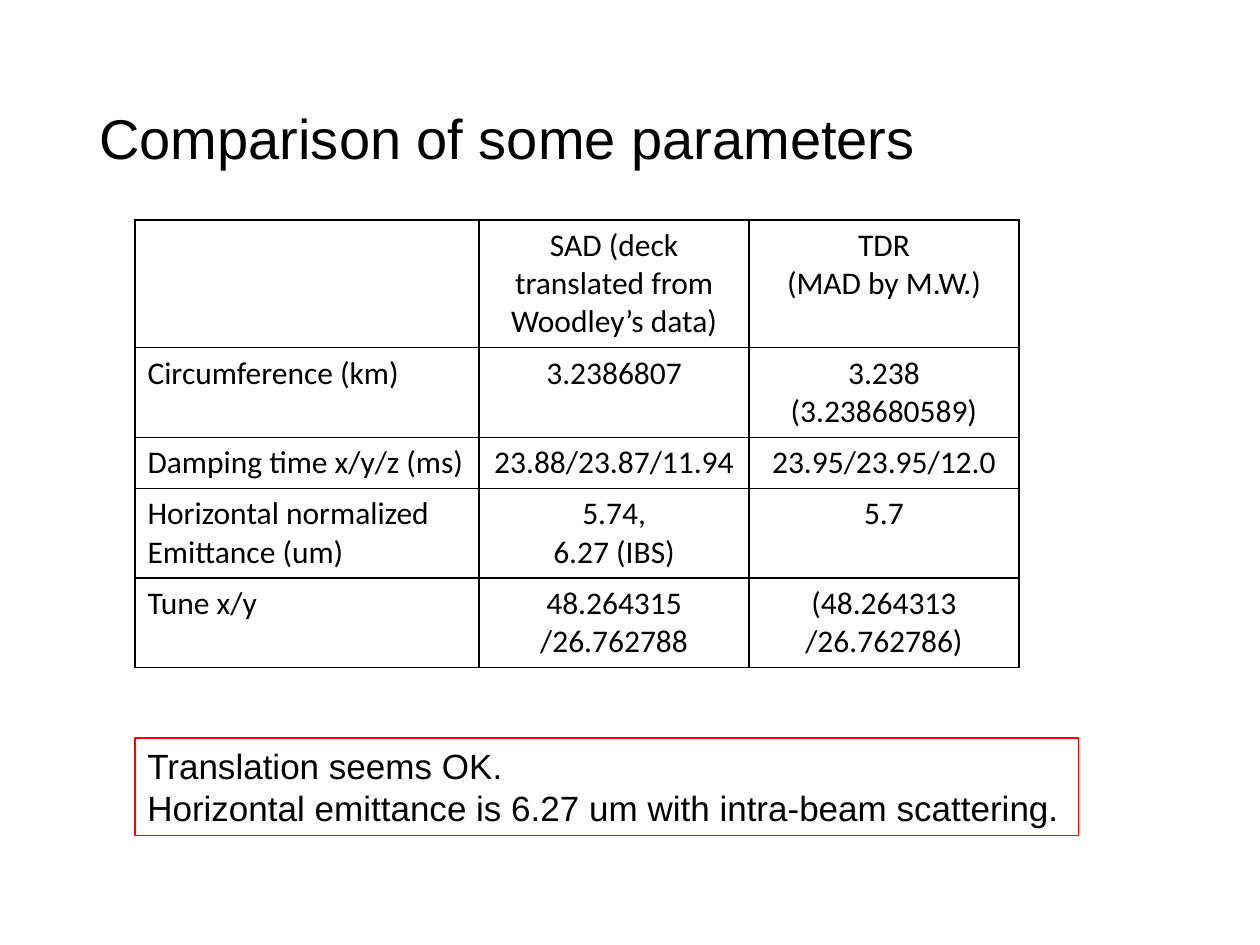
from dataclasses import dataclass

from lxml.etree import SubElement
from pptx import Presentation
from pptx.dml.color import RGBColor
from pptx.enum.text import MSO_ANCHOR, MSO_AUTO_SIZE, PP_ALIGN
from pptx.oxml.ns import qn
from pptx.util import Cm, Pt

BLACK = RGBColor(0x00, 0x00, 0x00)
RED = RGBColor(0xFF, 0x00, 0x00)

TITLE_FONT = "Arial"
TABLE_FONT = "Calibri"
LEFT_EDGE = Cm(2.72)
COLUMN_WIDTHS = (Cm(6.94), Cm(5.44), Cm(5.44))
ROW_HEIGHT = Cm(1.03)


@dataclass(frozen=True)
class Comparison:
    parameter: str
    sad: str
    tdr: str


COMPARISONS = (
    Comparison("", "SAD (deck translated from Woodley’s data)", "TDR\n(MAD by M.W.)"),
    Comparison("Circumference (km)", "3.2386807", "3.238\n(3.238680589)"),
    Comparison("Damping time x/y/z (ms)", "23.88/23.87/11.94", "23.95/23.95/12.0"),
    Comparison("Horizontal normalized Emittance (um)", "5.74,\n6.27 (IBS)", "5.7"),
    Comparison("Tune x/y", "48.264315\n/26.762788", "(48.264313\n/26.762786)"),
)


def format_text(frame, font: str, size: int, align: PP_ALIGN = PP_ALIGN.LEFT) -> None:
    for para in frame.paragraphs:
        para.alignment = align
        for span in para.runs:
            span.font.name = font
            span.font.size = Pt(size)
            span.font.bold = False
            span.font.color.rgb = BLACK


def add_cell_borders(cell, width: int = Pt(1)) -> None:
    properties = cell._tc.get_or_add_tcPr()
    for position, side in enumerate(("a:lnL", "a:lnR", "a:lnT", "a:lnB")):
        line = SubElement(properties, qn(side), w=str(width))
        fill = SubElement(line, qn("a:solidFill"))
        SubElement(fill, qn("a:srgbClr"), val=str(BLACK))
        properties.insert(position, line)  # borders precede the cell fill


def add_title(page, text: str) -> None:
    title = page.shapes.title
    title.left, title.top, title.width, title.height = Cm(1.75), Cm(1.01), Cm(21.9), Cm(3.68)
    frame = title.text_frame
    frame.text = text
    frame.vertical_anchor = MSO_ANCHOR.MIDDLE
    frame.paragraphs[0].line_spacing = 0.9
    format_text(frame, TITLE_FONT, 32)


def add_comparison_table(page, comparisons: tuple[Comparison, ...]) -> None:
    table = page.shapes.add_table(
        len(comparisons), len(COLUMN_WIDTHS), LEFT_EDGE, Cm(4.43),
        sum(COLUMN_WIDTHS), ROW_HEIGHT * len(comparisons),
    ).table
    table.first_row = table.horz_banding = False
    for column, width in zip(table.columns, COLUMN_WIDTHS):
        column.width = width
    for row, comparison in zip(table.rows, comparisons):
        row.height = ROW_HEIGHT
        texts = (comparison.parameter, comparison.sad, comparison.tdr)
        for index, (cell, text) in enumerate(zip(row.cells, texts)):
            cell.text_frame.text = text
            align = PP_ALIGN.CENTER if index else PP_ALIGN.LEFT
            format_text(cell.text_frame, TABLE_FONT, 18, align)
            cell.fill.background()
            add_cell_borders(cell)


def add_conclusion(page, text: str) -> None:
    box = page.shapes.add_textbox(LEFT_EDGE, Cm(14.88), Cm(19.02), Cm(1.96))
    box.line.color.rgb = RED
    box.line.width = Pt(0.75)
    frame = box.text_frame
    frame.text = text
    frame.word_wrap = False
    frame.auto_size = MSO_AUTO_SIZE.SHAPE_TO_FIT_TEXT
    format_text(frame, TITLE_FONT, 20)


def main() -> None:
    deck = Presentation()
    deck.slide_width, deck.slide_height = Cm(25.4), Cm(19.05)
    page = deck.slides.add_slide(deck.slide_layouts.get_by_name("Title Only"))
    add_title(page, "Comparison of some parameters")
    add_comparison_table(page, COMPARISONS)
    add_conclusion(
        page,
        "Translation seems OK.\n"
        "Horizontal emittance is 6.27 um with intra-beam scattering.",
    )
    deck.save("out.pptx")


if __name__ == "__main__":
    main()
